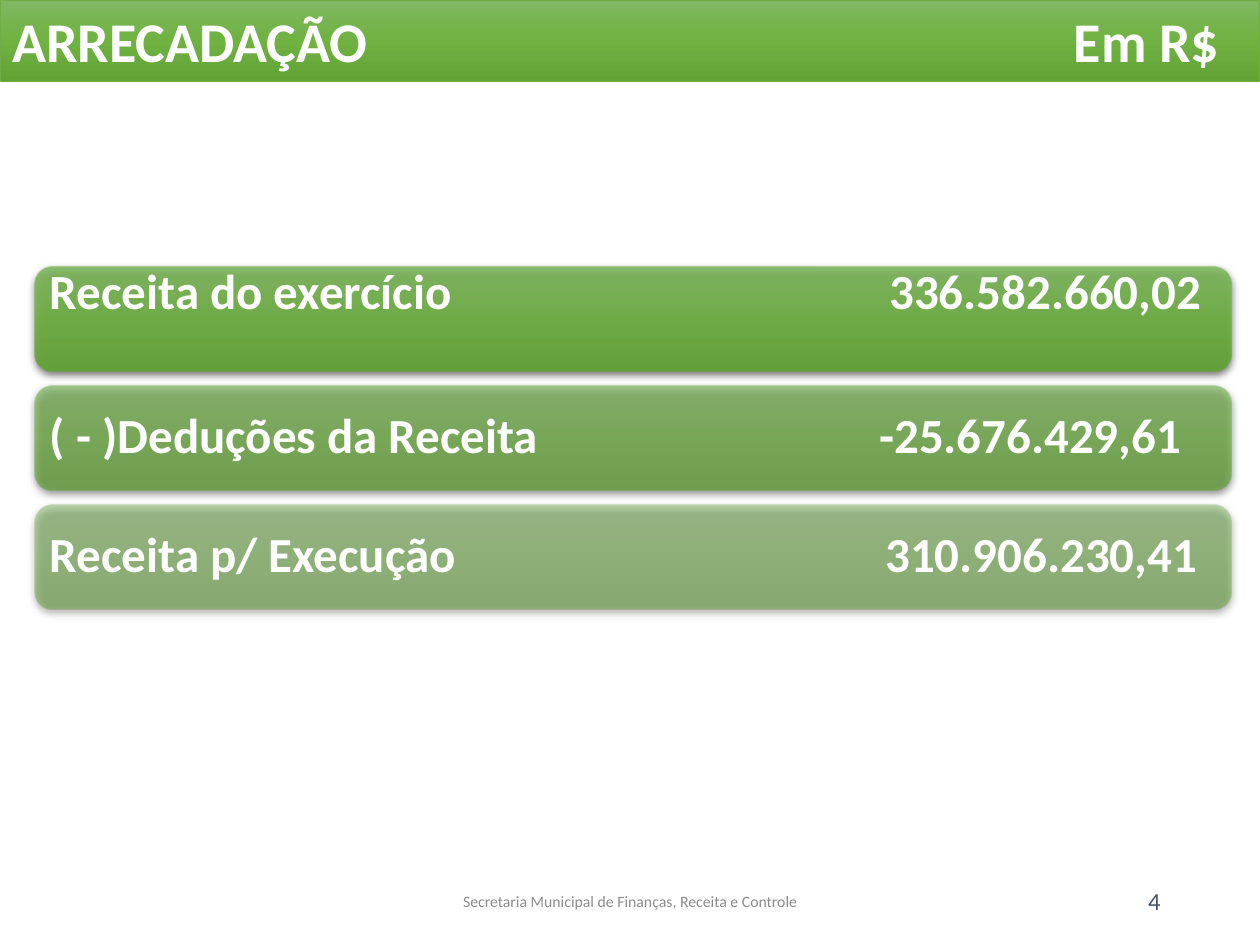
import pptx
import pptx.util
import pptx.dml.color
import pptx.enum.shapes
import pptx.enum.text
import pptx.oxml.ns
import lxml.etree

EMU_PER_PX = 914400 / 126
GREENS = ((0, "81B861"), (50, "6FB242"), (100, "62A336"))
SHAPES = pptx.enum.shapes.MSO_SHAPE
ALIGN = pptx.enum.text.PP_ALIGN
ANCHOR = pptx.enum.text.MSO_ANCHOR


def px(length):
    return pptx.util.Emu(round(length * EMU_PER_PX))


def color(value):
    return pptx.dml.color.RGBColor.from_string(value)


def add_xml(parent, tag, **attributes):
    values = {name: str(value) for name, value in attributes.items()}
    return lxml.etree.SubElement(parent, pptx.oxml.ns.qn(tag), values)


class RevenueSlide:
    font_name = "Calibri"

    def __init__(self, deck):
        self.slide = deck.slides.add_slide(deck.slide_layouts[6])

    def band(self, kind, box, opacity=100):
        band = self.slide.shapes.add_shape(kind, *map(px, box))
        band.shadow.inherit = False
        band.fill.gradient()
        band.fill.gradient_angle = 270
        stops = band._element.spPr.find(".//" + pptx.oxml.ns.qn("a:gsLst"))
        for stop in list(stops):
            stops.remove(stop)
        for position, green in GREENS:
            stop = add_xml(stops, "a:gs", pos=position * 1000)
            tint = add_xml(stop, "a:srgbClr", val=green)
            if opacity < 100:
                add_xml(tint, "a:alpha", val=opacity * 1000)
        band.line.fill.background()
        return band

    def outline(self, band, line_color, width):
        band.line.color.rgb = color(line_color)
        band.line.width = pptx.util.Pt(width)

    def cast_shadow(self, band):
        effects = band._element.spPr.find(pptx.oxml.ns.qn("a:effectLst"))
        shadow = add_xml(effects, "a:outerShdw", blurRad=pptx.util.Pt(4.5),
                         dist=pptx.util.Pt(1.5), dir=5400000, rotWithShape=0)
        add_xml(add_xml(shadow, "a:srgbClr", val="000000"), "a:alpha", val=63000)

    def set_text(self, frame, text, size, text_color, align=ALIGN.LEFT, bold=False,
                 tab=None, spacing=None, anchor=ANCHOR.MIDDLE):
        frame.word_wrap = True
        frame.vertical_anchor = anchor
        frame.text = text
        paragraph = frame.paragraphs[0]
        paragraph.alignment = align
        if tab:
            tabs = add_xml(paragraph._p.get_or_add_pPr(), "a:tabLst")
            add_xml(tabs, "a:tab", pos=px(tab), algn="r")
        if spacing:
            paragraph.line_spacing = spacing
        for run in paragraph.runs:
            run.font.name = self.font_name
            run.font.size = pptx.util.Pt(size)
            run.font.bold = bold
            run.font.color.rgb = color(text_color)

    def label(self, box, text, size, text_color, inset=None, **style):
        frame = self.slide.shapes.add_textbox(*map(px, box)).text_frame
        if inset is not None:
            frame.margin_left = frame.margin_right = px(15)
            frame.margin_top = frame.margin_bottom = px(inset)
        self.set_text(frame, text, size, text_color, **style)


def main():
    deck = pptx.Presentation()
    deck.slide_width, deck.slide_height = px(1260), px(945)
    page = RevenueSlide(deck)

    page.label((890, 876, 283, 50), "4", 14, "44546A", align=ALIGN.RIGHT)

    header = page.band(SHAPES.RECTANGLE, (0, 0, 1260, 81))
    page.outline(header, "70AD47", 0.5)
    page.set_text(header.text_frame, "ARRECADAÇÃO\tEm R$", 32, "FFFFFF",
                  bold=True, tab=1207)

    revenues = (
        ("Receita do exercício\t336.582.660,02", 90, 1151, ANCHOR.TOP, 0),
        ("( - )Deduções da Receita\t-25.676.429,61", 70, 1131, ANCHOR.MIDDLE, 15),
        ("Receita p/ Execução\t310.906.230,41", 50, 1147, ANCHOR.MIDDLE, 15),
    )
    for row, (text, opacity, tab, anchor, inset) in enumerate(revenues):
        box = (35, 267 + 119 * row, 1196, 104)
        page.cast_shadow(page.band(SHAPES.ROUNDED_RECTANGLE, box, opacity))
        page.label(box, text, 28, "FFFFFF", inset=inset, bold=True,
                   tab=tab, spacing=0.9, anchor=anchor)

    page.label((417, 876, 426, 50),
               "Secretaria Municipal de Finanças, Receita e Controle",
               9, "8C8C8C", align=ALIGN.CENTER)
    deck.save("out.pptx")


if __name__ == "__main__":
    main()
